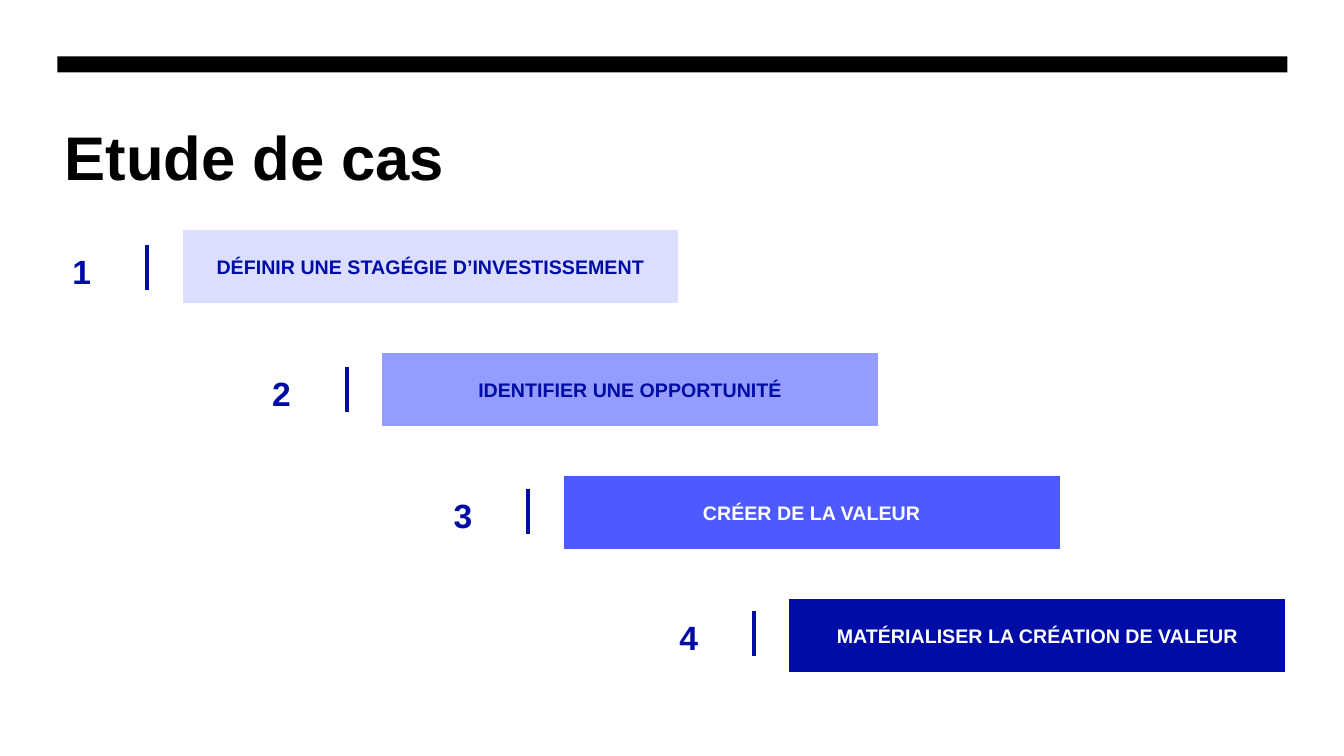
"""Build the four-step staircase slide of a case study."""
from lxml import etree
from pptx import Presentation
from pptx.dml.color import RGBColor
from pptx.enum.shapes import MSO_CONNECTOR, MSO_SHAPE
from pptx.enum.text import MSO_ANCHOR, MSO_AUTO_SIZE, PP_ALIGN
from pptx.oxml.ns import qn
from pptx.util import Emu, Pt

PX = 9144
COLORS = {
    "black": "000000", "white": "FFFFFF", "navy": "000CA6",
    "blue": "4D5AFF", "periwinkle": "949CFF", "lavender": "DBDEFF",
}
STEPS = [
    (179, "lavender", "navy", "DÉFINIR UNE STAGÉGIE D’INVESTISSEMENT"),
    (377, "periwinkle", "navy", "IDENTIFIER UNE OPPORTUNITÉ"),
    (557, "blue", "white", "CRÉER DE LA VALEUR"),
    (781, "navy", "white", "MATÉRIALISER LA CRÉATION DE VALEUR"),
]


def px(value):
    """Turn px into EMU."""
    return Emu(value * PX)


def rgb(name):
    """Return the named colour."""
    return RGBColor.from_string(COLORS[name])


class SlideBuilder:
    """Draw the elements of one slide in a shared style."""

    def __init__(self, slide, font="Arial"):
        """Keep the slide and the font."""
        self.slide = slide
        self.font = font

    def label(self, sp, text, size, color, align=PP_ALIGN.LEFT, **frame):
        """Put one bold line of text in a shape."""
        tf = sp.text_frame
        for name, value in frame.items():
            setattr(tf, name, value)
        p = tf.paragraphs[0]
        p.alignment = align
        r = p.add_run()
        r.text = text
        style = {"name": self.font, "size": Pt(size), "bold": True}
        for name, value in style.items():
            setattr(r.font, name, value)
        r.font.color.rgb = rgb(color)

    def text(self, box, text, size, color, **frame):
        """Add a text box."""
        sp = self.slide.shapes.add_textbox(*map(px, box))
        self.label(sp, text, size, color, **frame)

    def shape(self, kind, box, fill, border=None):
        """Add a filled shape with an optional border."""
        sp = self.slide.shapes.add_shape(kind, *map(px, box))
        sp.shadow.inherit = False
        sp.fill.solid()
        sp.fill.fore_color.rgb = rgb(fill)
        if border:
            sp.line.color.rgb = rgb(border)
            sp.line.width = Pt(3)
        else:
            sp.line.fill.background()
        return sp

    def bar(self, box, fill, color, text):
        """Add a labelled bar made from a flattened arrow."""
        sp = self.shape(MSO_SHAPE.RIGHT_ARROW, box, fill, "white")
        sp.adjustments[0], sp.adjustments[1] = 1, 0
        self.label(sp, text, 14, color, PP_ALIGN.CENTER,
                   vertical_anchor=MSO_ANCHOR.MIDDLE, word_wrap=True)

    def divider(self, x, y, height, color):
        """Add a vertical line."""
        line = self.slide.shapes.add_connector(
            MSO_CONNECTOR.STRAIGHT, px(x), px(y), px(x), px(y + height))
        line.line.color.rgb = rgb(color)
        line.line.width = Pt(3)
        etree.SubElement(line._element.spPr, qn("a:effectLst"))

    def step(self, index, left, fill, color, text):
        """Add a numbered step."""
        self.bar((left, 226 + 122 * index, 496, 77), fill, color, text)
        top = 243 + 121 * index
        self.text((left - 117, top + 1, 43, 50), str(index + 1), 24, "navy",
                  word_wrap=False, auto_size=MSO_AUTO_SIZE.SHAPE_TO_FIT_TEXT)
        self.divider(left - 33, top, 45, "navy")


def main():
    """Build and save the slide."""
    prs = Presentation()
    prs.slide_width, prs.slide_height = px(1333), px(750)
    s = SlideBuilder(prs.slides.add_slide(prs.slide_layouts[6]))
    s.shape(MSO_SHAPE.RECTANGLE, (57, 56, 1220, 16), "black")
    s.text((57, 107, 1220, 160), "Etude de cas", 44, "black",
           word_wrap=True, margin_left=px(7), margin_top=px(11))
    for index, step in enumerate(STEPS):
        s.step(index, *step)
    prs.save("out.pptx")


if __name__ == "__main__":
    main()
